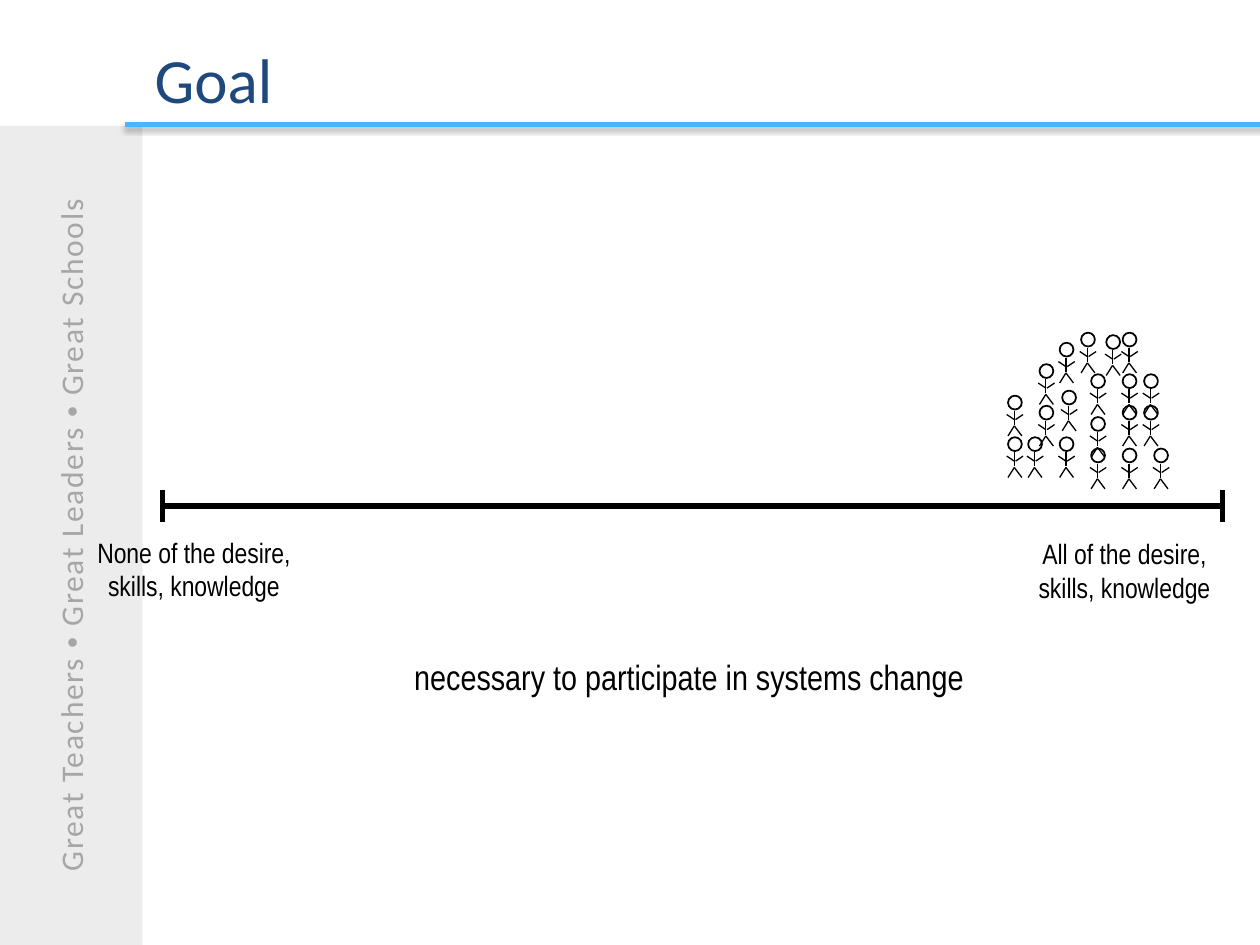
from lxml import etree
from pptx import Presentation
from pptx.dml.color import RGBColor
from pptx.enum.shapes import MSO_CONNECTOR, MSO_SHAPE
from pptx.enum.text import MSO_ANCHOR, PP_ALIGN
from pptx.oxml.ns import qn
from pptx.util import Inches, Pt

STRAIGHT = MSO_CONNECTOR.STRAIGHT
RECTANGLE, OVAL = MSO_SHAPE.RECTANGLE, MSO_SHAPE.OVAL
TOP, MIDDLE = MSO_ANCHOR.TOP, MSO_ANCHOR.MIDDLE
LEFT, CENTER = PP_ALIGN.LEFT, PP_ALIGN.CENTER

COLORS = {
    "band": "D9D9D9",
    "motto": "A6A6A6",
    "rule": "49B4FF",
    "title": "1F497D",
    "ink": "000000",
}
HEAD_SIZE = 0.11
LIMBS = [
    (0.05, 0.12, 0.05, 0.23),
    (0.12, 0.15, 0.06, 0.19),
    (-0.01, 0.15, 0.05, 0.19),
    (0.05, 0.24, 0.11, 0.32),
    (0.05, 0.24, 0, 0.32),
]
PEOPLE = [
    (8, 3.47), (8, 3.14), (8.25, 2.89), (8.41, 2.72), (8.43, 3.1),
    (8.41, 3.47), (8.16, 3.47), (8.25, 3.22), (8.66, 2.97), (8.66, 3.31),
    (8.66, 3.56), (8.58, 2.64), (8.91, 3.56), (8.91, 3.22), (8.91, 2.97),
    (8.78, 2.66), (9.16, 3.56), (9.08, 3.22), (9.08, 2.97), (8.91, 2.64),
]


def color(name):
    return RGBColor.from_string(COLORS[name])


def add_line(shapes, x1, y1, x2, y2, name, width):
    line = shapes.add_connector(STRAIGHT, Inches(x1), Inches(y1), Inches(x2), Inches(y2))
    line.line.color.rgb = color(name)
    line.line.width = Pt(width)
    effects = etree.SubElement(line._element.spPr, qn("a:effectLst"))
    return effects


def add_text(shapes, box, text, font, size, name, align=CENTER, anchor=TOP, wrap=True):
    label = shapes.add_textbox(*map(Inches, box))
    frame = label.text_frame
    frame.word_wrap = wrap
    frame.vertical_anchor = anchor
    para = frame.paragraphs[0]
    para.text = text
    para.alignment = align
    para.font.name = font
    para.font.size = Pt(size)
    para.font.color.rgb = color(name)


def add_motto_band(page, box):
    band = page.shapes.add_shape(RECTANGLE, *map(Inches, box))
    band.shadow.inherit = False
    band.line.fill.background()
    band.fill.solid()
    band.fill.fore_color.rgb = color("band")
    tint = band.fill._xPr.find(qn("a:solidFill"))[0]
    etree.SubElement(tint, qn("a:alpha")).set("val", "49000")

    frame = band.text_frame
    frame.vertical_anchor = MIDDLE
    frame._txBody.bodyPr.set("vert", "vert270")
    para = frame.paragraphs[0]
    para.alignment = CENTER
    para.font.size = Pt(18)
    para.font.color.rgb = color("motto")
    for text in ("Great Teachers ", "•", " Great Leaders ", "•", " Great Schools"):
        span = para.add_run()
        span.text = text
        span.font.name = "Arial" if text == "•" else "Calibri"
        span.font._element.set("spc", "100")


def add_header(page, box):
    effects = add_line(page.shapes, 10.05, 0.99, 0.99, 0.99, "rule", 3)
    shadow = etree.SubElement(
        effects, qn("a:outerShdw"), blurRad=str(Pt(3.1)), dist=str(Pt(1.8)),
        dir="5400000", rotWithShape="0")
    shade = etree.SubElement(shadow, qn("a:srgbClr"), val=COLORS["ink"])
    etree.SubElement(shade, qn("a:alpha"), val="35000")
    add_text(page.shapes, box, "Goal", "Calibri", 36, "title", LEFT, MIDDLE)


def add_scale(page, box):
    left, top, width, height = box
    right, middle = left + width, top + height / 2
    group = page.shapes.add_group_shape()
    add_line(group.shapes, left, middle, right, middle, "ink", 3)
    for x in (left, right):
        add_line(group.shapes, x, top + height, x, top, "ink", 3)


def add_person(page, left, top):
    person = page.shapes.add_group_shape()
    head = person.shapes.add_shape(
        OVAL, Inches(left), Inches(top), Inches(HEAD_SIZE), Inches(HEAD_SIZE))
    head.shadow.inherit = False
    head.fill.background()
    head.line.color.rgb = color("ink")
    head.line.width = Pt(1)
    for x1, y1, x2, y2 in LIMBS:
        add_line(person.shapes, left + x1, top + y1, left + x2, top + y2, "ink", 0.75)


def add_captions(page):
    add_text(page.shapes, (3.17, 5.15, 4.6, 0.44),
             "necessary to participate in systems change", "Arial Narrow", 20, "ink", wrap=False)
    add_text(page.shapes, (0.54, 4.2, 2, 0.64),
             "None of the desire, skills, knowledge", "Arial Narrow", 16, "ink")
    add_text(page.shapes, (7.97, 4.21, 1.91, 0.64),
             "All of the desire, skills, knowledge", "Arial Narrow", 16, "ink")


def main():
    deck = Presentation()
    deck.slide_width, deck.slide_height = Inches(10), Inches(7.5)
    page = deck.slides.add_slide(deck.slide_layouts[6])
    add_motto_band(page, (-0.01, 1, 1.14, 6.5))
    add_header(page, (1.13, 0.15, 7.77, 0.95))
    add_scale(page, (1.29, 3.89, 8.41, 0.25))
    for left, top in PEOPLE:
        add_person(page, left, top)
    add_captions(page)
    deck.save("out.pptx")


if __name__ == "__main__":
    main()
